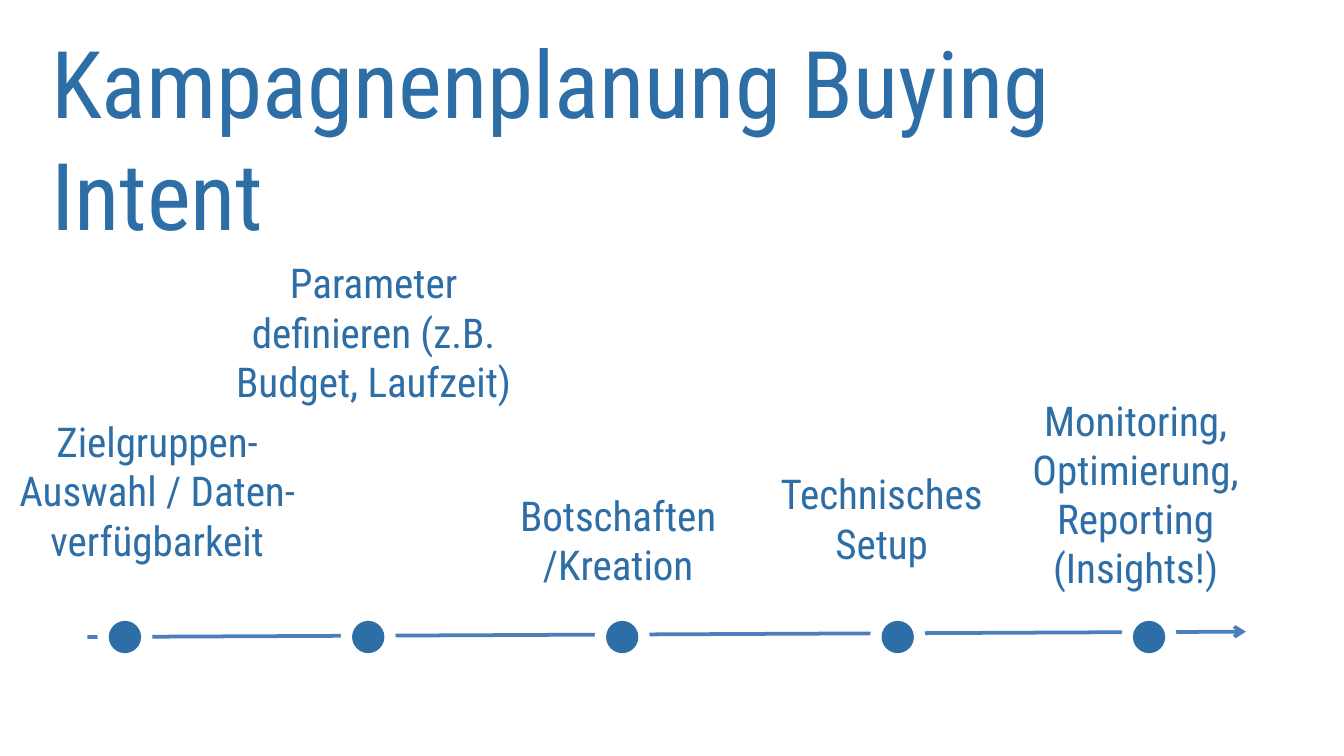
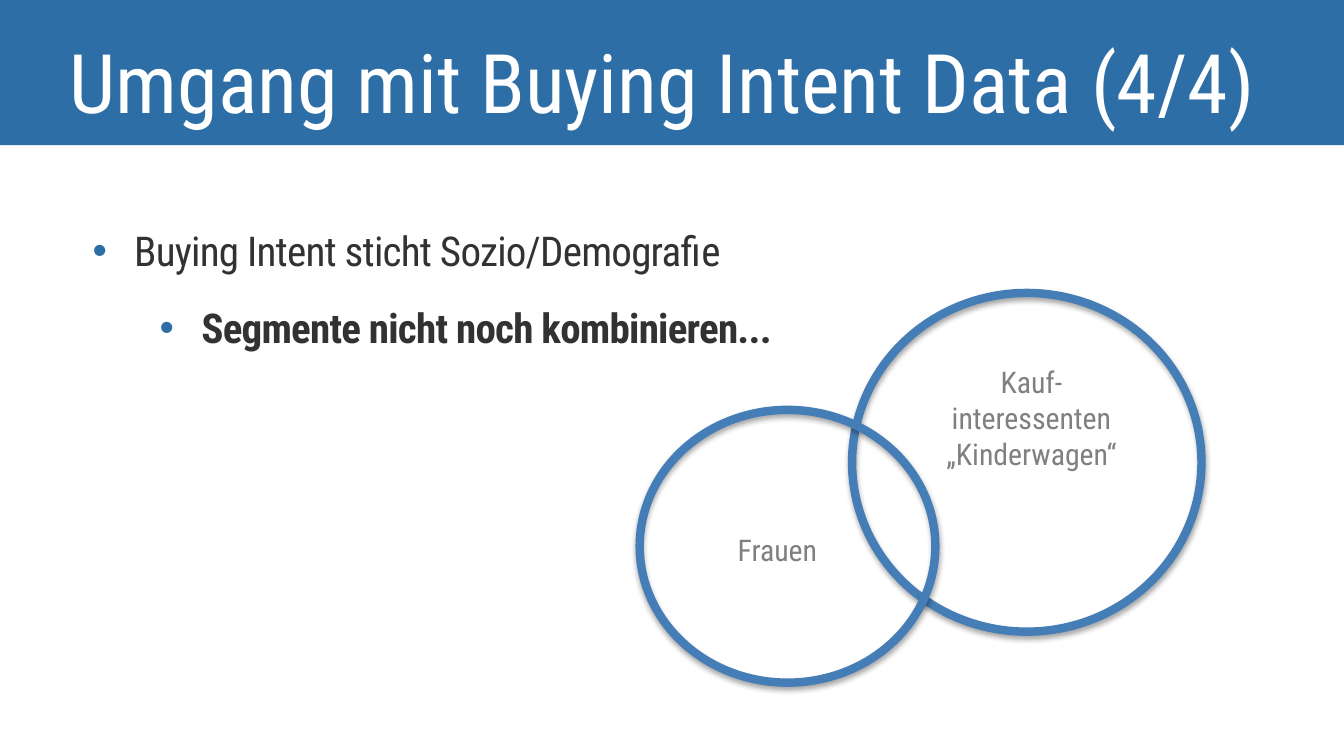
import pptx
import pptx.util
import pptx.dml.color
import pptx.enum.shapes
import pptx.enum.text
import pptx.oxml
import pptx.oxml.ns

Inches = pptx.util.Inches
Pt = pptx.util.Pt
ShapeKind = pptx.enum.shapes.MSO_SHAPE
Align = pptx.enum.text.PP_ALIGN

FONT = "Roboto Condensed"
COLORS = {
    "blue": "2D6EA6",
    "arrow": "4B7EBC",
    "ring": "457EB6",
    "white": "FFFFFF",
    "black": "000000",
    "dark": "323232",
    "gray": "808080",
}

PLAN_TITLE = "Kampagnenplanung Buying Intent"
STEPS = [
    ("Zielgruppen-Auswahl / Daten-verfügbarkeit", 0.93, (0, 3.05, 2.34, 1.1)),
    ("Parameter definieren (z.B. Budget, Laufzeit)", 2.74, (1.61, 1.87, 2.34, 0.63)),
    ("Botschaften /Kreation", 4.63, (3.43, 3.6, 2.34, 0.63)),
    ("Technisches Setup", 6.68, (5.39, 3.44, 2.34, 0.63)),
    ("Monitoring, Optimierung, Reporting (Insights!)", 8.55, (7.28, 2.89, 2.34, 0.63)),
]
DOT_SIZE = 0.24
DOT_TOP = 4.62

DATA_TITLE = "Umgang mit Buying Intent Data (4/4)"
BULLETS = [
    ("Buying Intent sticht Sozio/Demografie", 0, 0.31, False),
    ("Segmente nicht noch kombinieren...", 1, 0.81, True),
]
CIRCLES = [
    ((6.34, 2.18, 2.6, 2.52), "Kauf-interessenten „Kinderwagen“",
     (6.89, 2.66, 1.57, 0.91), Align.CENTER),
    ((4.76, 3.05, 2.2, 2.03), "Frauen", (5.39, 3.91, 0.87, 0.37), Align.LEFT),
]


def rgb(name):
    return pptx.dml.color.RGBColor.from_string(COLORS[name])


def place(shape, area):
    shape.left, shape.top, shape.width, shape.height = map(Inches, area)


def add_xml(parent, tag, body="", **attributes):
    values = " ".join(f'{key}="{value}"' for key, value in attributes.items())
    namespace = pptx.oxml.ns.nsdecls("a")
    element = pptx.oxml.parse_xml(f"<a:{tag} {namespace} {values}>{body}</a:{tag}>")
    parent.append(element)


def format_frame(frame, right=0.1):
    frame.word_wrap = True
    frame.auto_size = pptx.enum.text.MSO_AUTO_SIZE.NONE
    frame.vertical_anchor = pptx.enum.text.MSO_ANCHOR.TOP
    frame.margin_left, frame.margin_right = Inches(0.1), Inches(right)
    frame.margin_top = frame.margin_bottom = Inches(0.05)


def write(para, text, size=22, color="blue", align=Align.LEFT, bold=False,
          before=0, after=0, tracking=0):
    para.alignment = align
    para.space_before, para.space_after = Pt(before), Pt(after)
    span = para.add_run()
    span.text = text
    span.font.name = FONT
    span.font.size = Pt(size)
    span.font.bold = bold
    span.font.color.rgb = rgb(color)
    if tracking:
        span.font._element.set("spc", str(round(tracking * 100)))


def add_text(page, area, text, **style):
    box = page.shapes.add_textbox(*map(Inches, area))
    format_frame(box.text_frame)
    write(box.text_frame.paragraphs[0], text, **style)


def set_title(page, area, text, right=0.1, **style):
    title = page.shapes.title
    place(title, area)
    format_frame(title.text_frame, right)
    write(title.text_frame.paragraphs[0], text, **style)
    page.shapes._spTree.append(title._element)


def add_shape(page, kind, area, fill=None, line=None, width=0):
    shape = page.shapes.add_shape(kind, *map(Inches, area))
    shape.shadow.inherit = False
    if fill:
        shape.fill.solid()
        shape.fill.fore_color.rgb = rgb(fill)
    else:
        shape.fill.background()
    if line:
        shape.line.color.rgb = rgb(line)
        shape.line.width = Pt(width)
    else:
        shape.line.fill.background()
    return shape


def add_shadow(shape, color, opacity, **geometry):
    effects = shape._element.spPr.find(pptx.oxml.ns.qn("a:effectLst"))
    tint = f'<a:srgbClr val="{COLORS[color]}"><a:alpha val="{opacity * 1000}"/></a:srgbClr>'
    add_xml(effects, "outerShdw", tint, rotWithShape=0, **geometry)


def add_arrow(page, start, end):
    arrow = page.shapes.add_connector(
        pptx.enum.shapes.MSO_CONNECTOR.STRAIGHT, *map(Inches, start + end))
    arrow.line.color.rgb = rgb("arrow")
    arrow.line.width = Pt(2)
    add_xml(arrow.line._get_or_add_ln(), "tailEnd", type="arrow")
    add_xml(arrow._element.spPr, "effectLst")


def add_bullets(page, area, items):
    box = page.shapes.add_textbox(*map(Inches, area))
    frame = box.text_frame
    format_frame(frame)
    for index, (text, level, margin, bold) in enumerate(items):
        para = frame.add_paragraph() if index else frame.paragraphs[0]
        properties = para._p.get_or_add_pPr()
        properties.set("marL", str(Inches(margin)))
        properties.set("indent", str(Inches(-0.31)))
        add_xml(properties, "buClr", f'<a:srgbClr val="{COLORS["blue"]}"/>')
        add_xml(properties, "buFont", typeface="Arial")
        add_xml(properties, "buChar", char="•")
        para.level = level
        write(para, text, color="dark", bold=bold, before=3 if index else 0,
              after=12, tracking=-0.4)


def build_plan(page):
    set_title(page, (0.28, 0.14, 9.37, 3.31), PLAN_TITLE, right=0.2, size=50, after=6)
    add_arrow(page, (0.65, 4.74), (9.27, 4.7))
    for text, center, area in STEPS:
        dot = add_shape(page, ShapeKind.OVAL,
                        (center - DOT_SIZE / 2, DOT_TOP, DOT_SIZE, DOT_SIZE), fill="blue")
        add_shadow(dot, "white", 100, sx=170000, sy=170000, algn="ctr")
        add_text(page, area, text, align=Align.CENTER, after=6)


def build_data(page):
    add_shape(page, ShapeKind.RECTANGLE, (0, 0, 10, 1.08), fill="blue")
    set_title(page, (0.42, 0.18, 9.57, 0.86), DATA_TITLE, size=44, color="white")
    add_bullets(page, (0.59, 1.63, 8.58, 1.05), BULLETS)
    for area, label, label_area, align in CIRCLES:
        circle = add_shape(page, ShapeKind.OVAL, area, line="ring", width=4.5)
        add_shadow(circle, "black", 35, blurRad=Pt(3.1), dist=Pt(1.8), dir=90 * 60000)
        add_text(page, label_area, label, size=16, color="gray", align=align)


def main():
    deck = pptx.Presentation()
    deck.slide_width = Inches(10)
    deck.slide_height = deck.slide_width * 9 // 16
    for build in (build_plan, build_data):
        build(deck.slides.add_slide(deck.slide_layouts[5]))
    deck.save("out.pptx")


if __name__ == "__main__":
    main()
